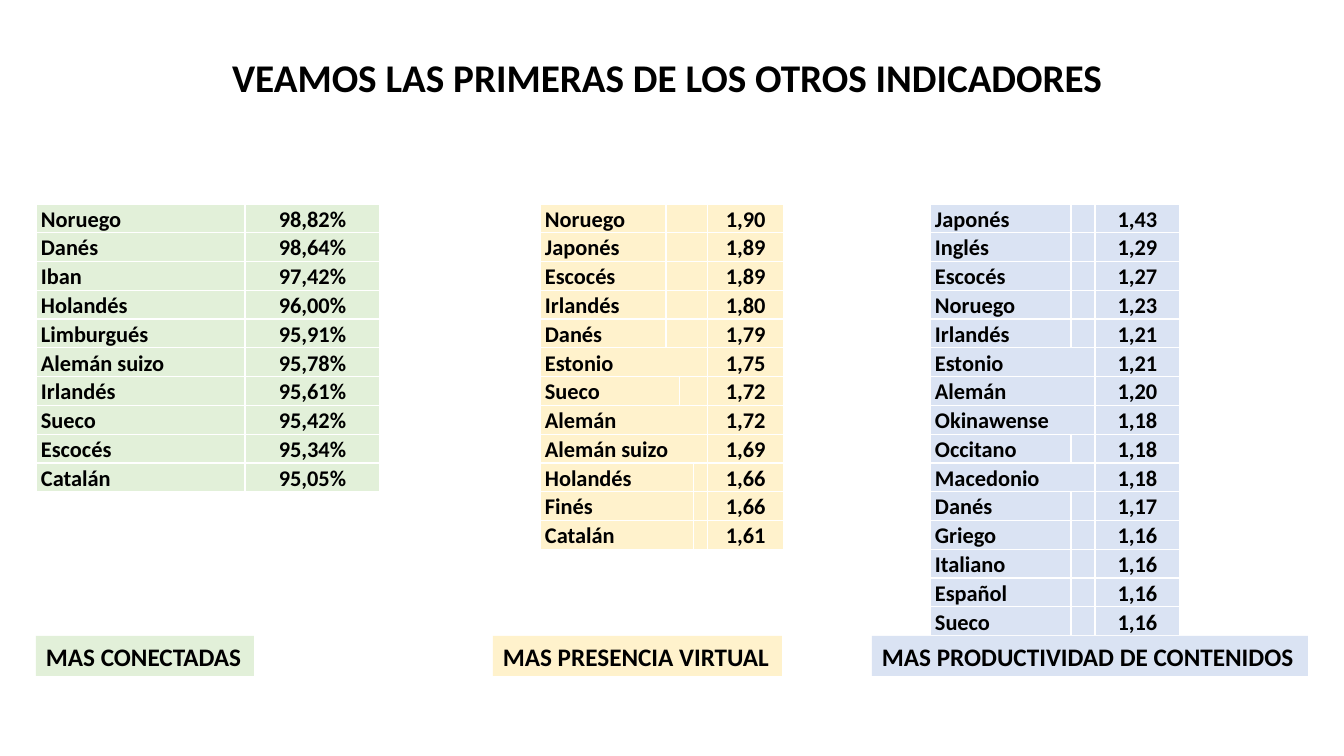
from lxml.etree import SubElement
from pptx import Presentation
from pptx.dml.color import RGBColor
from pptx.enum.shapes import MSO_SHAPE as Shape
from pptx.enum.text import MSO_ANCHOR as Anchor, MSO_AUTO_SIZE as AutoSize, PP_ALIGN as Align
from pptx.oxml.ns import qn
from pptx.util import Pt

EMU_PER_PX = 914400 / 100.8
BLACK = RGBColor(0x00, 0x00, 0x00)
GREEN = RGBColor(0xE2, 0xF0, 0xD9)
YELLOW = RGBColor(0xFF, 0xF2, 0xCC)
BLUE = RGBColor(0xDA, 0xE3, 0xF3)

TABLE_TOP, ROW_HEIGHT = 204, 27
LABEL_TOP, LABEL_HEIGHT = 636, 40

# Each row: language, value, number of columns the language spans
CONNECTED = [
    ("Noruego", "98,82%", 1), ("Danés", "98,64%", 1), ("Iban", "97,42%", 1),
    ("Holandés", "96,00%", 1), ("Limburgués", "95,91%", 1), ("Alemán suizo", "95,78%", 1),
    ("Irlandés", "95,61%", 1), ("Sueco", "95,42%", 1), ("Escocés", "95,34%", 1),
    ("Catalán", "95,05%", 1),
]
PRESENCE = [
    ("Noruego", "1,90", 1), ("Japonés", "1,89", 1), ("Escocés", "1,89", 1),
    ("Irlandés", "1,80", 1), ("Danés", "1,79", 1), ("Estonio", "1,75", 4),
    ("Sueco", "1,72", 2), ("Alemán", "1,72", 4), ("Alemán suizo", "1,69", 4),
    ("Holandés", "1,66", 3), ("Finés", "1,66", 3), ("Catalán", "1,61", 3),
]
PRODUCTIVITY = [
    ("Japonés", "1,43", 1), ("Inglés", "1,29", 1), ("Escocés", "1,27", 1),
    ("Noruego", "1,23", 1), ("Irlandés", "1,21", 1), ("Estonio", "1,21", 2),
    ("Alemán", "1,20", 2), ("Okinawense", "1,18", 2), ("Occitano", "1,18", 1),
    ("Macedonio", "1,18", 2), ("Danés", "1,17", 1), ("Griego", "1,16", 1),
    ("Italiano", "1,16", 1), ("Español", "1,16", 1), ("Sueco", "1,16", 1),
]

# Table left, column widths, rows, colour, label, label left, label width
INDICATORS = [
    (36, [209, 135], CONNECTED, GREEN, "MAS CONECTADAS", 36, 218),
    (540, [126, 8, 8, 12, 76], PRESENCE, YELLOW, "MAS PRESENCIA VIRTUAL", 493, 289),
    (930, [141, 24, 85], PRODUCTIVITY, BLUE, "MAS PRODUCTIVIDAD DE CONTENIDOS", 872, 436),
]


def px(length):
    return round(length * EMU_PER_PX)


def apply(target, values):
    for attribute, value in values.items():
        setattr(target, attribute, value)


class IndicatorSlide:
    font = {"name": "Calibri", "bold": True}
    frame = {"word_wrap": False, "auto_size": AutoSize.SHAPE_TO_FIT_TEXT}
    cell_format = {"margin_left": px(5), "margin_right": px(5), "margin_top": 0,
                   "margin_bottom": 0, "vertical_anchor": Anchor.BOTTOM}
    cell_size = 16

    def __init__(self, presentation):
        self.slide = presentation.slides.add_slide(presentation.slide_layouts[5])

    def add_text(self, paragraph, text, size, align=Align.LEFT):
        paragraph.alignment = align
        run = paragraph.add_run()
        run.text = text
        apply(run.font, {**self.font, "size": Pt(size)})
        run.font.color.rgb = BLACK

    def title(self, text, left, top, width, height):
        heading = self.slide.shapes.title
        apply(heading, {"left": px(left), "top": px(top),
                        "width": px(width), "height": px(height)})
        apply(heading.text_frame, {**self.frame, "vertical_anchor": Anchor.TOP})
        self.add_text(heading.text_frame.paragraphs[0], text, 28)

    def label(self, text, left, width, colour):
        box = self.slide.shapes.add_shape(
            Shape.RECTANGLE, px(left), px(LABEL_TOP), px(width), px(LABEL_HEIGHT))
        box.shadow.inherit = False
        box.fill.solid()
        box.fill.fore_color.rgb = colour
        box.line.fill.background()
        apply(box.text_frame, {**self.frame, "vertical_anchor": Anchor.TOP})
        self.add_text(box.text_frame.paragraphs[0], text, 18)

    def cell(self, cell, text, colour, align):
        apply(cell, self.cell_format)
        cell.fill.solid()
        cell.fill.fore_color.rgb = colour
        paragraph = cell.text_frame.paragraphs[0]
        paragraph.line_spacing = 1.07
        if text:
            self.add_text(paragraph, text, self.cell_size, align)
        else:
            # An empty cell needs its own text size to keep the row low
            SubElement(paragraph._p, qn("a:endParaRPr"), sz=str(self.cell_size * 100))

    def ranking(self, left, widths, rows, colour):
        last = len(widths) - 1
        table = self.slide.shapes.add_table(
            len(rows), len(widths), px(left), px(TABLE_TOP),
            px(sum(widths)), px(ROW_HEIGHT * len(rows))).table
        table.horz_banding = False
        for column, width in zip(table.columns, widths):
            column.width = px(width)
        for r, (language, value, span) in enumerate(rows):
            texts = {0: language, last: value}
            for c in range(len(widths)):
                align = Align.CENTER if c == last else Align.LEFT
                self.cell(table.cell(r, c), texts.get(c), colour, align)
            # Join the language columns and the blank columns after them
            for first, end in ((0, span - 1), (span, last - 1)):
                if end > first:
                    table.cell(r, first).merge(table.cell(r, end))


def main():
    presentation = Presentation()
    apply(presentation, {"slide_width": px(1344), "slide_height": px(756)})
    indicators = IndicatorSlide(presentation)

    # Heading
    indicators.title("VEAMOS LAS PRIMERAS DE LOS OTROS INDICADORES", 222, 48, 900, 58)

    # Rankings, then the label below each one
    for left, widths, rows, colour, *_ in INDICATORS:
        indicators.ranking(left, widths, rows, colour)
    for *_, colour, label, label_left, label_width in INDICATORS:
        indicators.label(label, label_left, label_width, colour)

    presentation.save("out.pptx")


if __name__ == "__main__":
    main()
